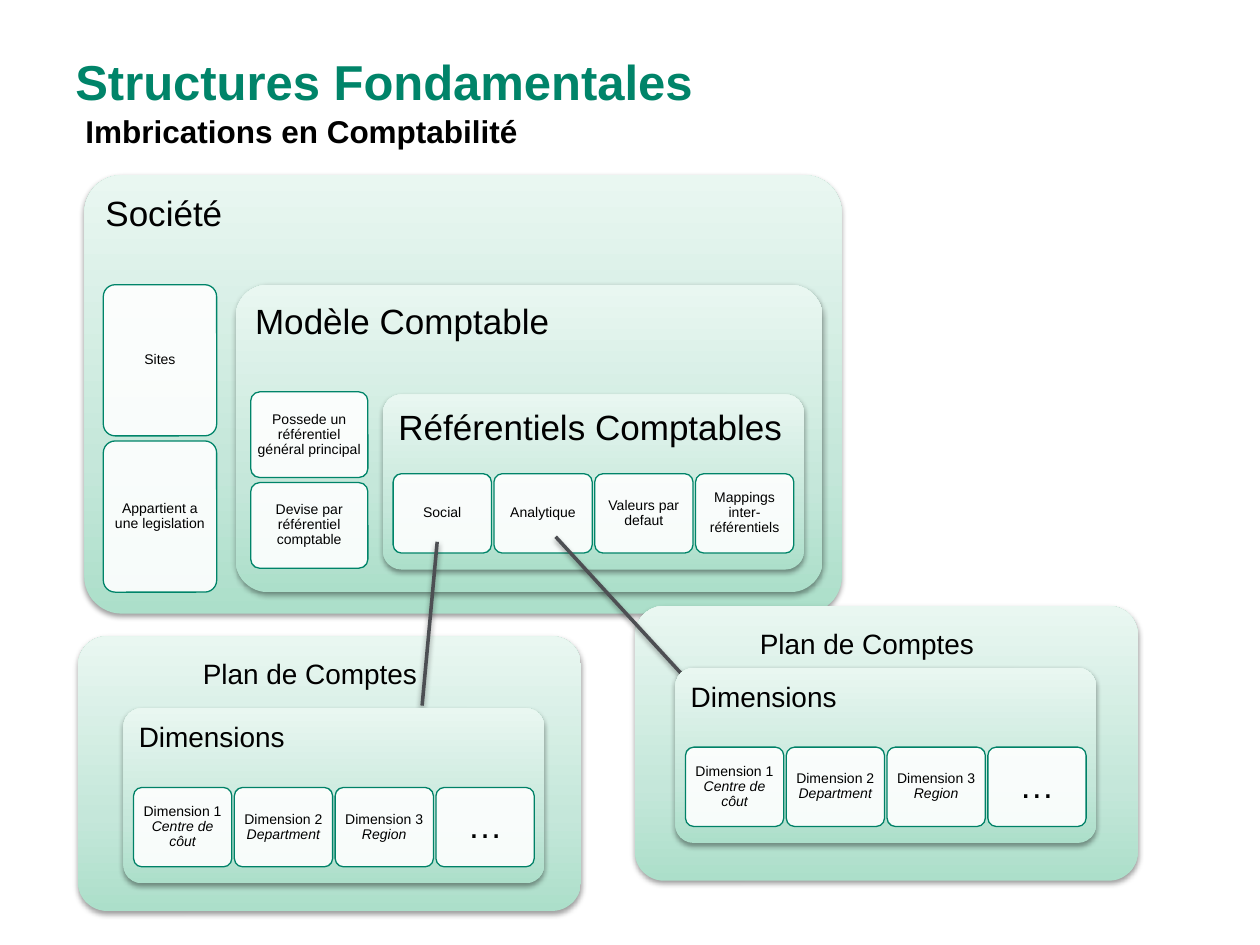
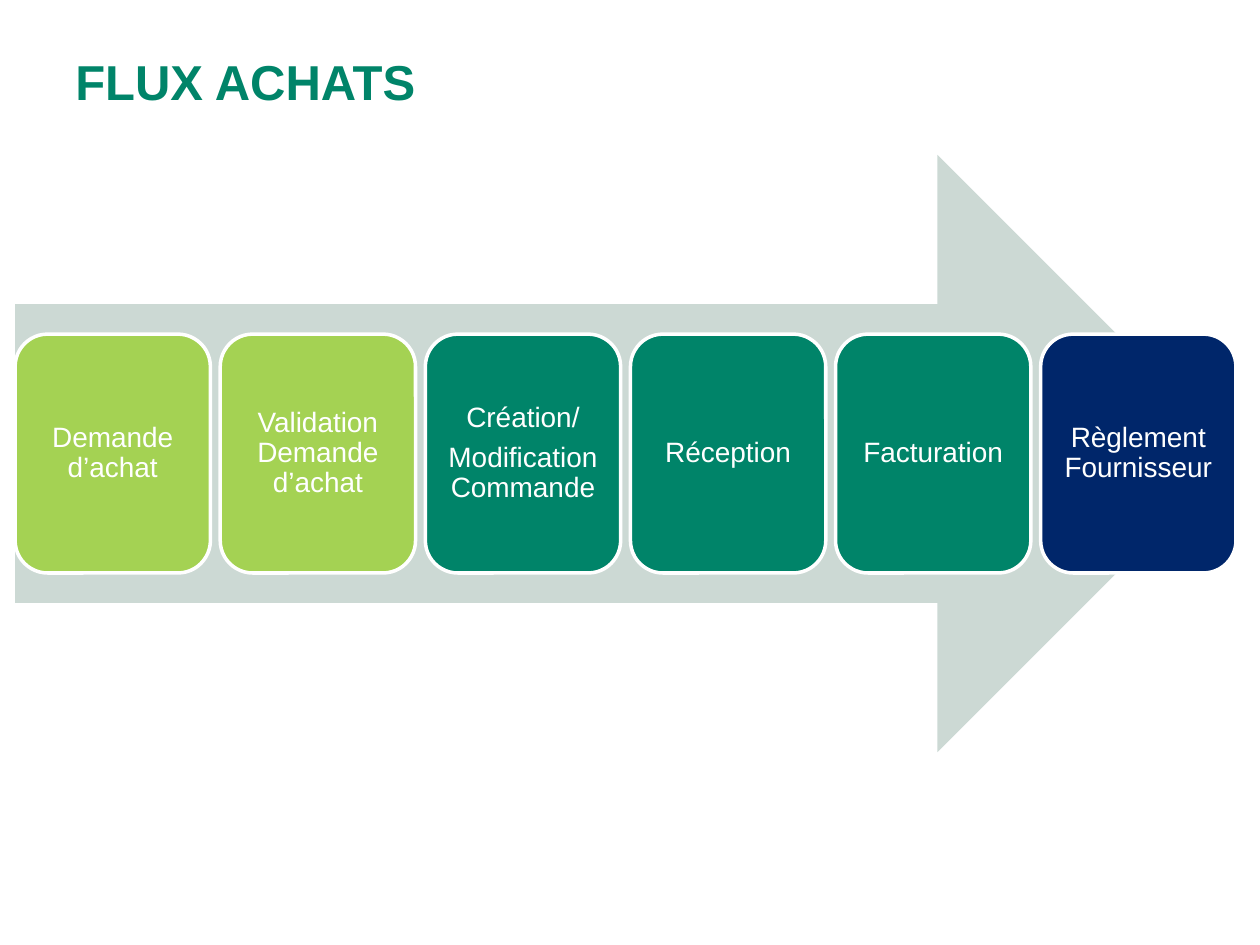
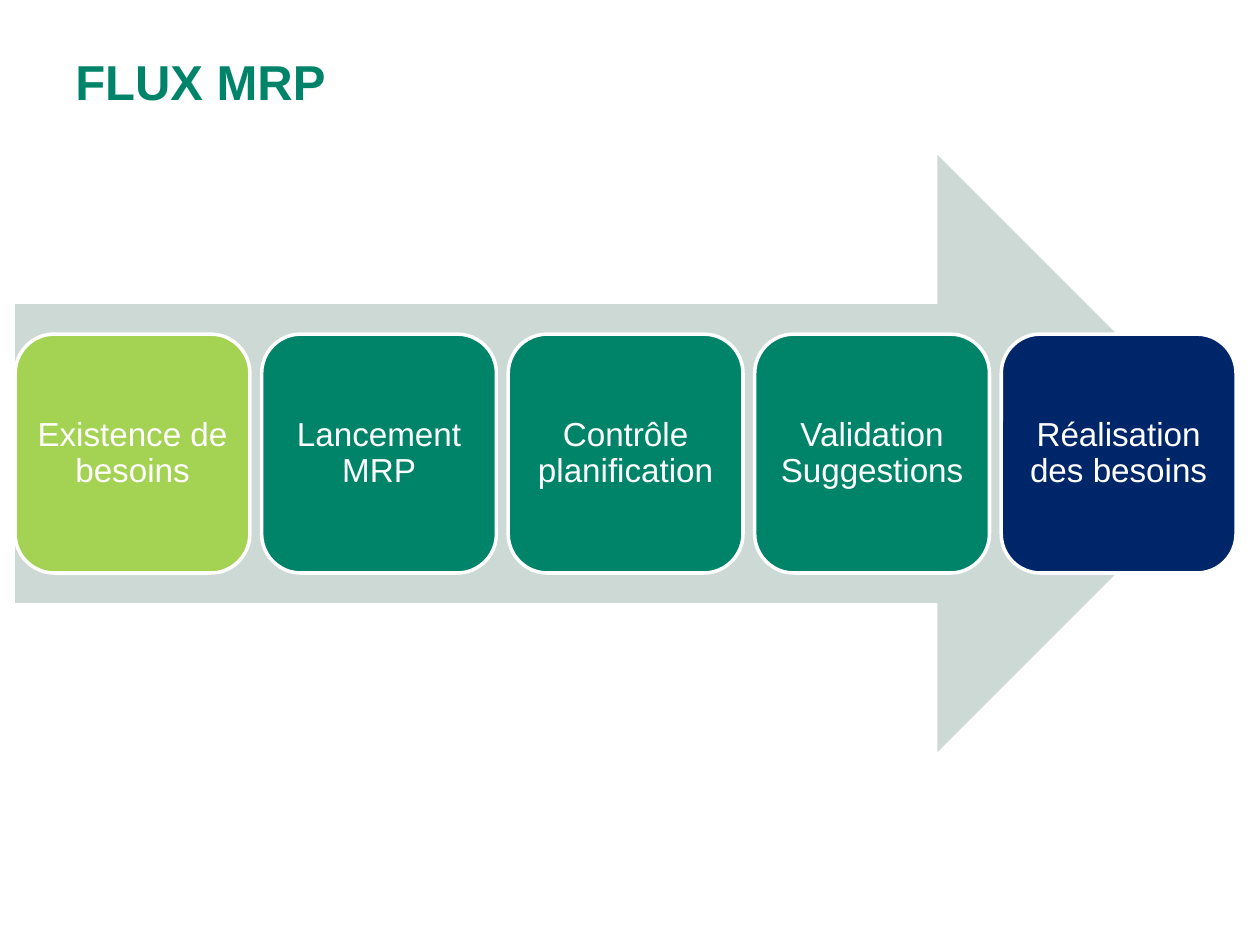
from copy import deepcopy

from lxml import etree
from pptx import Presentation
from pptx.dml.color import RGBColor
from pptx.enum import shapes, text
from pptx.oxml.ns import qn
from pptx.util import Inches, Pt

FONT = "Arial"
GREEN = RGBColor(0x00, 0x84, 0x69)
DEEP_GREEN = RGBColor(0x00, 0x81, 0x67)
LIME = RGBColor(0xA4, 0xD2, 0x53)
NAVY = RGBColor(0x00, 0x26, 0x6A)
ARROW_GREY = RGBColor(0xCC, 0xD9, 0xD4)
LINK_GREY = RGBColor(0x4D, 0x4F, 0x53)
BLACK = RGBColor(0x00, 0x00, 0x00)
WHITE = RGBColor(0xFF, 0xFF, 0xFF)
PANEL_STOPS = [
    (0, RGBColor(0xAC, 0xDF, 0xCA)),
    (0.35, RGBColor(0xC5, 0xE7, 0xDA)),
    (1, RGBColor(0xE9, 0xF7, 0xF1)),
]
CENTER = text.PP_ALIGN.CENTER
LEFT = text.PP_ALIGN.LEFT
MIDDLE = text.MSO_ANCHOR.MIDDLE
TOP = text.MSO_ANCHOR.TOP
DIMENSIONS = [
    "Dimension 1\vCentre de côut",
    "Dimension 2\vDepartment",
    "Dimension 3\vRegion",
    "…",
]


def write(shape, content, size, color=BLACK, align=CENTER, anchor=MIDDLE, inset=0.08):
    """Fill a shape with tight paragraphs; text after a line break is italic."""
    frame = shape.text_frame
    frame.word_wrap = True
    frame.vertical_anchor = anchor
    frame.margin_left = frame.margin_right = Inches(inset)
    frame.margin_top = frame.margin_bottom = Inches(inset)
    frame.text = content
    for paragraph in frame.paragraphs:
        paragraph.alignment = align
        paragraph.line_spacing = 0.9
        paragraph.space_after = Pt(round(size * 0.35, 1))
        for index, run in enumerate(paragraph.runs):
            run.font.name = FONT
            run.font.size = Pt(size)
            run.font.color.rgb = color
            if index:
                run.font.italic = True


def add_heading(slide, box, content, size, color):
    """Add one bold line of heading."""
    shape = slide.shapes.add_textbox(*map(Inches, box))
    frame = shape.text_frame
    frame.word_wrap = True
    frame.vertical_anchor = MIDDLE
    frame.text = content
    font = frame.paragraphs[0].runs[0].font
    font.name, font.size, font.bold = FONT, Pt(size), True
    font.color.rgb = color


def add_slide(presentation, title):
    """Add a blank slide with the common title."""
    slide = presentation.slides.add_slide(presentation.slide_layouts[6])
    add_heading(slide, (0.5, 0.33, 9, 0.62), title, 28, GREEN)
    return slide


def add_shadow(shape):
    """Give a shape or connector a soft shadow below it."""
    effects = etree.SubElement(shape._element.spPr, qn("a:effectLst"))
    shadow = etree.SubElement(
        effects, qn("a:outerShdw"), blurRad="40000", dist="20000", dir="5400000", rotWithShape="0"
    )
    color = etree.SubElement(shadow, qn("a:srgbClr"), val="000000")
    etree.SubElement(color, qn("a:alpha"), val="38000")


def add_rounded(slide, box, radius):
    """Add a rounded rectangle."""
    shape = slide.shapes.add_shape(shapes.MSO_SHAPE.ROUNDED_RECTANGLE, *map(Inches, box))
    shape.adjustments[0] = radius
    return shape


def add_panel(slide, box, title="", size=20, radius=0.105):
    """Add a shaded green panel titled at its top left."""
    panel = add_rounded(slide, box, radius)
    panel.fill.gradient()
    panel.fill.gradient_angle = 90
    stop_list = panel._element.spPr.find(".//" + qn("a:gsLst"))
    stop_list.append(deepcopy(stop_list[0]))
    for stop, (position, color) in zip(panel.fill.gradient_stops, PANEL_STOPS):
        stop.position = position
        stop.color.rgb = color
    panel.line.fill.background()
    add_shadow(panel)
    if title:
        write(panel, title, size, align=LEFT, anchor=TOP)


def add_card(slide, box, content, outline=GREEN):
    """Add a translucent white card."""
    card = add_rounded(slide, box, 0.105)
    card.fill.solid()
    card.fill.fore_color.rgb = WHITE
    color = card._element.spPr.find(".//" + qn("a:srgbClr"))
    etree.SubElement(color, qn("a:alpha"), val="90000")
    card.line.color.rgb = outline
    card.line.width = Pt(0.75)
    card.shadow.inherit = False
    write(card, content, 20 if content == "…" else 8, inset=0.03)


def add_card_row(slide, left, top, title, size, cards, outline=GREEN):
    """Add a panel holding one row of cards."""
    add_panel(slide, (left, top, 3.34, 1.39), title, size)
    for index, content in enumerate(cards):
        add_card(slide, (left + 0.08 + 0.8 * index, top + 0.63, 0.78, 0.63), content, outline)


def add_link(slide, start, end):
    """Draw a grey line between two points."""
    line = slide.shapes.add_connector(
        shapes.MSO_CONNECTOR.STRAIGHT, *map(Inches, (*start, *end))
    )
    line.line.color.rgb = LINK_GREY
    line.line.width = Pt(2)
    add_shadow(line)


def add_company(slide, left, top):
    """Nest the ledgers in the accounting model, and the model in the company."""
    add_panel(slide, (left, top, 6.01, 3.48), "Société", radius=0.085)
    for index, content in enumerate(["Sites", "Appartient a une legislation"]):
        add_card(slide, (left + 0.15, top + 0.87 + 1.24 * index, 0.9, 1.2), content)
    model_left, model_top = left + 1.2, top + 0.87
    add_panel(slide, (model_left, model_top, 4.66, 2.44), "Modèle Comptable")
    rules = ["Possede un référentiel général principal", "Devise par référentiel comptable"]
    for index, content in enumerate(rules):
        add_card(slide, (model_left + 0.12, model_top + 0.85 + 0.72 * index, 0.93, 0.68), content)
    ledgers = ["Social", "Analytique", "Valeurs par defaut", "Mappings inter-référentiels"]
    add_card_row(slide, model_left + 1.17, model_top + 0.87, "Référentiels Comptables", 20, ledgers)


def add_chart_of_accounts(slide, left, top, dimensions_offset, link_start, link_end):
    """Add a chart of accounts with its dimensions and its link to a ledger."""
    add_panel(slide, (left, top, 3.99, 2.18))
    label_box = (left + 0.63, top + 0.05, 2.42, 0.52)
    label = slide.shapes.add_textbox(*map(Inches, label_box))
    write(label, "Plan de Comptes", 16)
    add_link(slide, link_start, link_end)
    across, down = dimensions_offset
    add_card_row(slide, left + across, top + down, "Dimensions", 16, DIMENSIONS, DEEP_GREEN)


def build_structures(presentation):
    """Build the slide of nested accounting structures."""
    slide = add_slide(presentation, "Structures Fondamentales")
    add_company(slide, 0.67, 1.39)
    add_chart_of_accounts(slide, 5.04, 4.81, (0.32, 0.49), (4.41, 4.26), (5.42, 5.36))
    add_heading(slide, (0.58, 0.84, 3.72, 0.4), "Imbrications en Comptabilité", 18, BLACK)
    add_chart_of_accounts(slide, 0.62, 5.05, (0.36, 0.57), (3.47, 4.3), (3.35, 5.6))


def build_flow(presentation, title, steps, size, box=(0.12, 1.23, 9.69, 4.74)):
    """Build a slide of steps spread evenly along a large arrow."""
    slide = add_slide(presentation, title)
    arrow = slide.shapes.add_shape(shapes.MSO_SHAPE.RIGHT_ARROW, *map(Inches, box))
    arrow.fill.solid()
    arrow.fill.fore_color.rgb = ARROW_GREY
    arrow.line.fill.background()
    arrow.shadow.inherit = False
    left, top, width, height = box
    gap_share = 0.05
    step_width = width / (len(steps) + gap_share * (len(steps) - 1))
    for index, (content, color) in enumerate(steps):
        step_left = left + index * step_width * (1 + gap_share)
        step = add_rounded(slide, (step_left, top + 0.3 * height, step_width, 0.4 * height), 0.1667)
        step.fill.solid()
        step.fill.fore_color.rgb = color
        step.line.color.rgb = WHITE
        step.line.width = Pt(2)
        step.shadow.inherit = False
        write(step, content, size, WHITE, inset=0.07)


def main():
    """Build and save the presentation."""
    presentation = Presentation()
    presentation.slide_width = Inches(10)
    presentation.slide_height = Inches(7.5)
    build_structures(presentation)
    purchase_steps = [
        ("Demande d’achat", LIME),
        ("Validation Demande d’achat", LIME),
        ("Création/\nModification Commande", GREEN),
        ("Réception", GREEN),
        ("Facturation", GREEN),
        ("Règlement Fournisseur", NAVY),
    ]
    build_flow(presentation, "FLUX ACHATS", purchase_steps, 16)
    planning_steps = [
        ("Existence de besoins", LIME),
        ("Lancement MRP", GREEN),
        ("Contrôle planification", GREEN),
        ("Validation Suggestions", GREEN),
        ("Réalisation des besoins", NAVY),
    ]
    build_flow(presentation, "FLUX MRP", planning_steps, 19)
    presentation.save("out.pptx")


if __name__ == "__main__":
    main()
